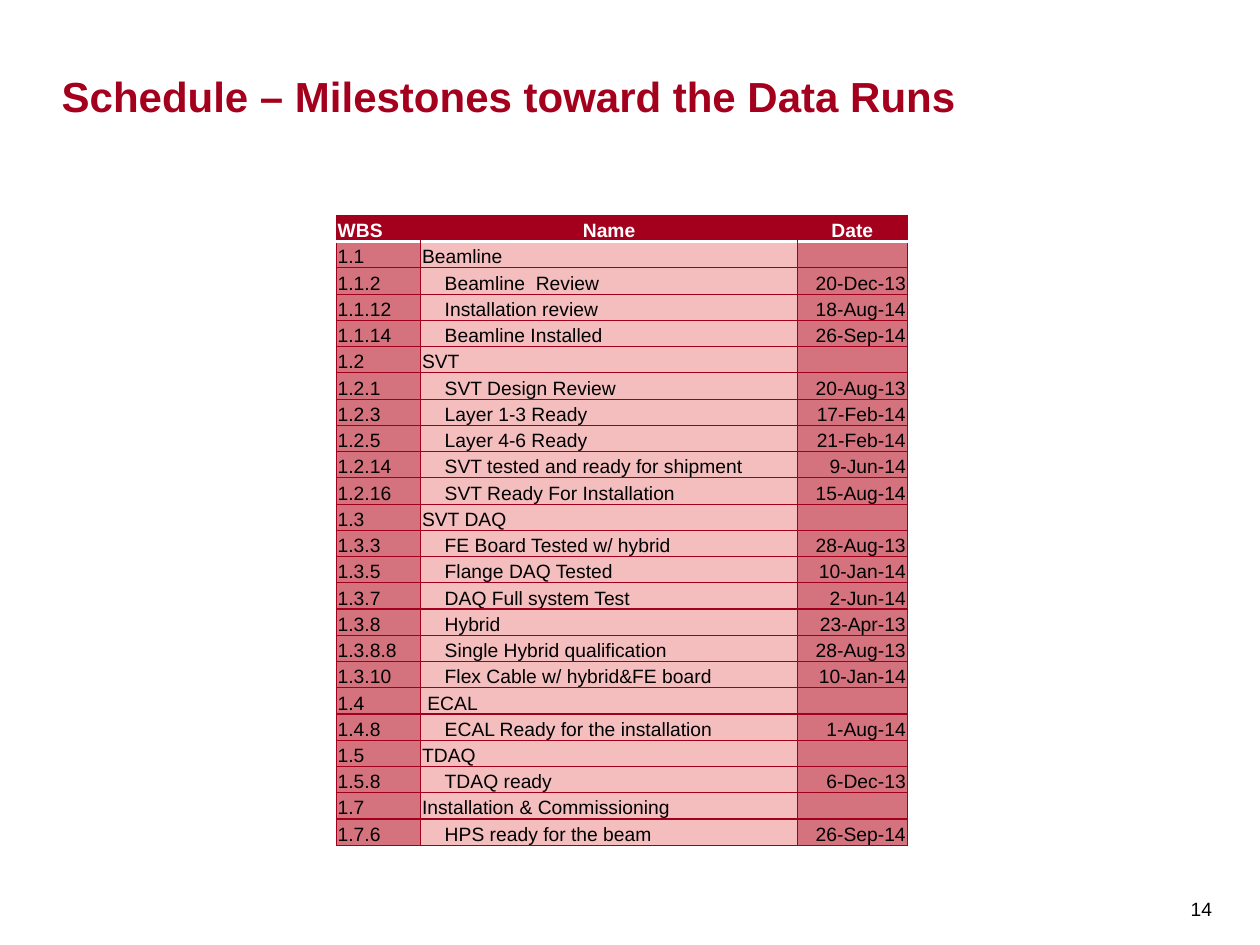
from lxml import etree
from pptx import Presentation
from pptx.dml.color import RGBColor
from pptx.enum.text import MSO_ANCHOR, PP_ALIGN
from pptx.oxml.ns import qn
from pptx.util import Inches, Pt

CRIMSON = RGBColor(0xA4, 0x00, 0x1D)
BORDER = RGBColor(0xA0, 0x00, 0x1C)
ROSE = RGBColor(0xD4, 0x72, 0x7D)
PINK = RGBColor(0xF4, 0xBD, 0xBE)
WHITE = RGBColor(0xFF, 0xFF, 0xFF)
BLACK = RGBColor(0x00, 0x00, 0x00)

FONT = "Arial"
TABLE_SIZE = 11
COLUMN_WIDTHS = (0.67, 2.99, 0.87)
TABLE_HEIGHT = 5
HEADERS = ("WBS", "Name", "Date")
HEADER_ALIGNMENTS = (PP_ALIGN.LEFT, PP_ALIGN.CENTER, PP_ALIGN.CENTER)
BODY_ALIGNMENTS = (PP_ALIGN.LEFT, PP_ALIGN.LEFT, PP_ALIGN.RIGHT)
BODY_FILLS = (ROSE, PINK, ROSE)

# Rows without a date are section headings
MILESTONES = (
    ("1.1", "Beamline", ""),
    ("1.1.2", "Beamline  Review", "20-Dec-13"),
    ("1.1.12", "Installation review", "18-Aug-14"),
    ("1.1.14", "Beamline Installed", "26-Sep-14"),
    ("1.2", "SVT", ""),
    ("1.2.1", "SVT Design Review", "20-Aug-13"),
    ("1.2.3", "Layer 1-3 Ready", "17-Feb-14"),
    ("1.2.5", "Layer 4-6 Ready", "21-Feb-14"),
    ("1.2.14", "SVT tested and ready for shipment", "9-Jun-14"),
    ("1.2.16", "SVT Ready For Installation", "15-Aug-14"),
    ("1.3", "SVT DAQ", ""),
    ("1.3.3", "FE Board Tested w/ hybrid", "28-Aug-13"),
    ("1.3.5", "Flange DAQ Tested", "10-Jan-14"),
    ("1.3.7", "DAQ Full system Test", "2-Jun-14"),
    ("1.3.8", "Hybrid", "23-Apr-13"),
    ("1.3.8.8", "Single Hybrid qualification", "28-Aug-13"),
    ("1.3.10", "Flex Cable w/ hybrid&FE board", "10-Jan-14"),
    ("1.4", " ECAL", ""),
    ("1.4.8", "ECAL Ready for the installation", "1-Aug-14"),
    ("1.5", "TDAQ", ""),
    ("1.5.8", "TDAQ ready", "6-Dec-13"),
    ("1.7", "Installation & Commissioning", ""),
    ("1.7.6", "HPS ready for the beam", "26-Sep-14"),
)


def write_text(text_frame, text, *, size, color=BLACK, bold=False,
               alignment=PP_ALIGN.LEFT):
    paragraph = text_frame.paragraphs[0]
    paragraph.alignment = alignment
    if not text:
        # An empty cell still needs the small size to keep its row height
        etree.SubElement(paragraph._p, qn("a:endParaRPr"), sz=str(size * 100))
        return
    run = paragraph.add_run()
    run.text = text
    run.font.name = FONT
    run.font.size = Pt(size)
    run.font.bold = bold
    run.font.color.rgb = color


def set_margins(target, left, top, right, bottom):
    target.margin_left = Inches(left)
    target.margin_top = Inches(top)
    target.margin_right = Inches(right)
    target.margin_bottom = Inches(bottom)


def add_text_box(slide, text, position, *, anchor, margins, **text_format):
    shape = slide.shapes.add_textbox(*(Inches(value) for value in position))
    text_frame = shape.text_frame
    text_frame.word_wrap = True
    text_frame.vertical_anchor = anchor
    set_margins(text_frame, *margins)
    write_text(text_frame, text, **text_format)


def set_borders(cell, borders):
    """Draw borders given as side: (color, width); None hides a side."""
    properties = cell._tc.get_or_add_tcPr()
    for index, side in enumerate("LRTB"):
        line = etree.Element(qn(f"a:ln{side}"))
        if borders[side] is None:
            etree.SubElement(line, qn("a:noFill"))
        else:
            color, width = borders[side]
            line.set("w", str(Pt(width)))
            fill = etree.SubElement(line, qn("a:solidFill"))
            etree.SubElement(fill, qn("a:srgbClr"), val=str(color))
        properties.insert(index, line)


def format_cell(cell, text, *, fill, borders, indent=0.01, **text_format):
    cell.fill.solid()
    cell.fill.fore_color.rgb = fill
    cell.vertical_anchor = MSO_ANCHOR.BOTTOM
    set_margins(cell, indent, 0.01, 0.01, 0)
    write_text(cell.text_frame, text, size=TABLE_SIZE, **text_format)
    set_borders(cell, borders)


def add_milestone_table(slide):
    row_count = len(MILESTONES) + 1
    table = slide.shapes.add_table(
        row_count, len(HEADERS), Inches(2.67), Inches(1.71),
        Inches(sum(COLUMN_WIDTHS)), Inches(TABLE_HEIGHT)).table
    for column, width in zip(table.columns, COLUMN_WIDTHS):
        column.width = Inches(width)
    for row in table.rows:
        row.height = Inches(TABLE_HEIGHT / row_count)

    thin = (BORDER, 0.75)
    thick = (WHITE, 2)

    # Header row
    last = len(HEADERS) - 1
    for column, header in enumerate(HEADERS):
        borders = {"L": thin if column == 0 else None,
                   "R": thin if column == last else None,
                   "T": thin, "B": thick}
        format_cell(table.cell(0, column), header, fill=CRIMSON,
                    borders=borders, color=WHITE, bold=True,
                    alignment=HEADER_ALIGNMENTS[column])

    # Milestone rows
    for row, milestone in enumerate(MILESTONES, start=1):
        borders = {"L": thin, "R": thin, "B": thin,
                   "T": thick if row == 1 else thin}
        has_date = bool(milestone[2])
        for column, text in enumerate(milestone):
            format_cell(table.cell(row, column), text,
                        fill=BODY_FILLS[column], borders=borders,
                        indent=0.19 if column == 1 and has_date else 0.01,
                        alignment=BODY_ALIGNMENTS[column])


def main():
    presentation = Presentation()
    presentation.slide_width = Inches(10)
    presentation.slide_height = Inches(7.5)
    slide = presentation.slides.add_slide(presentation.slide_layouts[6])

    # Page number and title
    add_text_box(slide, "14", (9.37, 6.91, 0.35, 0.59),
                 anchor=MSO_ANCHOR.MIDDLE, margins=(0.08, 0.06, 0.08, 0.05),
                 size=11)
    add_text_box(slide, "Schedule – Milestones toward the Data Runs",
                 (0.49, 0.14, 8.86, 0.82), anchor=MSO_ANCHOR.BOTTOM,
                 margins=(0, 0, 0, 0), size=24, color=CRIMSON, bold=True)

    add_milestone_table(slide)
    presentation.save("out.pptx")


if __name__ == "__main__":
    main()
